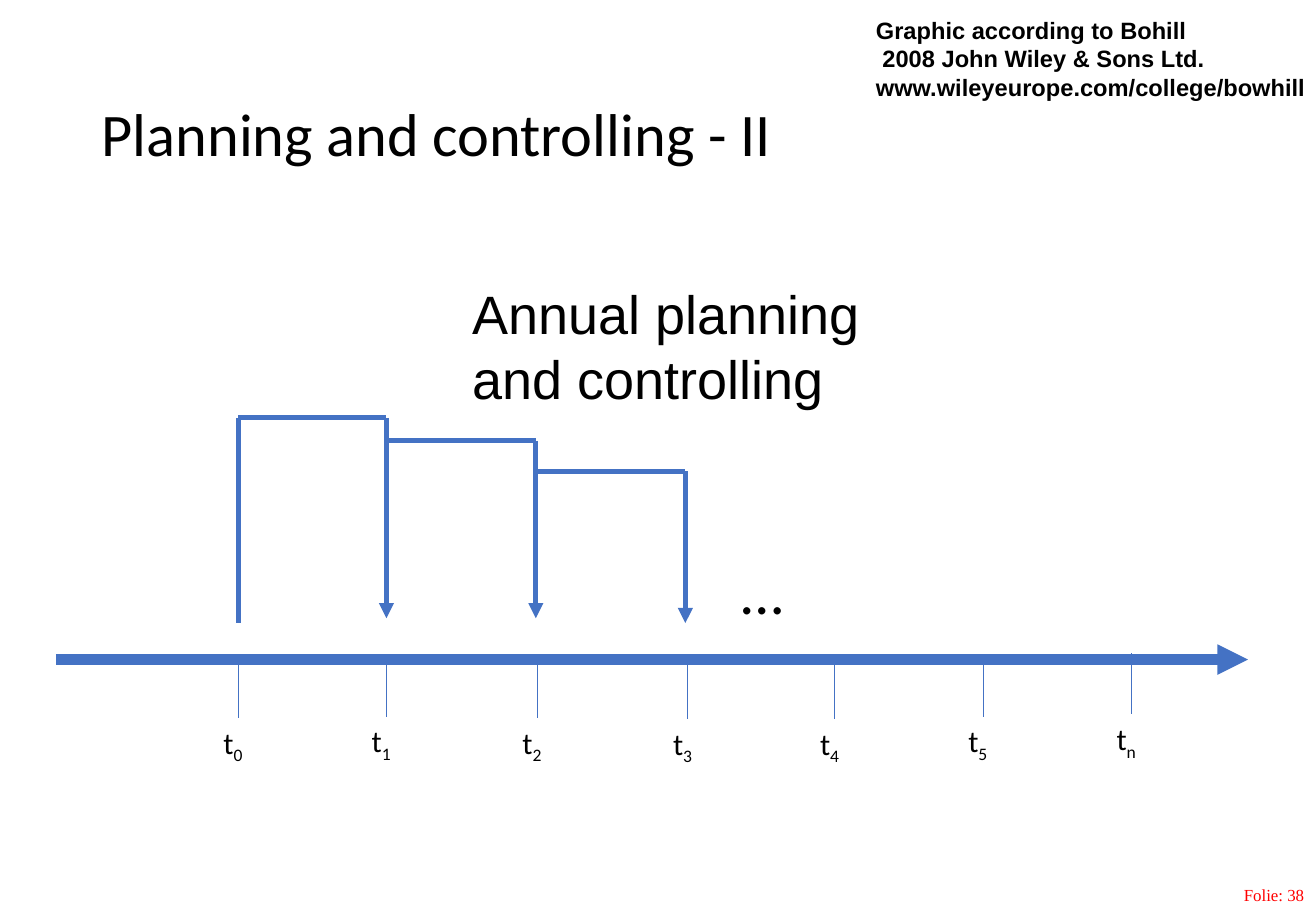
from pptx import Presentation
from pptx.util import Inches, Pt
from pptx.dml.color import RGBColor as RGB
from pptx.enum.shapes import MSO_CONNECTOR as Link
from pptx.enum.text import MSO_ANCHOR as Anchor, PP_ALIGN as Align
from pptx.oxml.ns import qn
from lxml.etree import SubElement

BLACK = RGB(0x00, 0x00, 0x00)
RED = RGB(0xFF, 0x00, 0x00)
BLUE = RGB(0x44, 0x72, 0xC4)

# Content: (box, paragraphs, font format, paragraph format, anchor)
TEXTS = [
    ((7.31, 7.23, 3.52, 0.27), ["Folie: 38"],
     dict(name="Times New Roman", size=Pt(10)), RED,
     dict(alignment=Align.RIGHT), Anchor.TOP),
    ((0.74, 0.4, 9.34, 1.45), ["Planning and controlling - II"],
     dict(name="Calibri", size=Pt(35.8)), BLACK,
     dict(line_spacing=0.9), Anchor.MIDDLE),
    ((7.11, 0.08, 3.84, 0.81),
     ["Graphic according to Bohill\v 2008 John Wiley & Sons Ltd.",
      "www.wileyeurope.com/college/bowhill"],
     dict(name="Arial", size=Pt(14), bold=True), BLACK, {}, Anchor.TOP),
    ((3.79, 2.26, 4.2, 1.72), ["Annual planning\vand controlling"],
     dict(name="Arial", size=Pt(32)), BLACK, {}, Anchor.TOP),
    ((6, 4.51, 0.53, 0.71), ["…"],
     dict(name="Calibri", size=Pt(36)), BLACK, {}, Anchor.TOP),
]
LABEL = dict(name="Calibri", size=Pt(18))

# Time axis: (subscript, x, top of tick)
AXIS = (0.46, 5.43, 10.27, 5.43)
TICKS = [("0", 1.96, 5.41), ("1", 3.18, 5.4), ("2", 4.42, 5.41),
         ("3", 5.66, 5.42), ("4", 6.87, 5.42), ("5", 8.09, 5.4),
         ("n", 9.31, 5.38)]
TICK = 0.5

# Planning periods: (left, right, top, arrow tip)
START = (1.96, 3.44, 1.96, 5.13)
STEPS = [(1.96, 3.18, 3.44, 5.09), (3.19, 4.41, 3.63, 5.09),
         (4.42, 5.64, 3.88, 5.13)]

deck = Presentation()
deck.slide_width, deck.slide_height = Inches(10.83), Inches(7.5)
slide = deck.slides.add_slide(deck.slide_layouts[6])


def style(item, form):
    for key, val in form.items():
        setattr(item, key, val)


def add_text(box, paras, form, color, layout, anchor):
    frame = slide.shapes.add_textbox(*map(Inches, box)).text_frame
    style(frame, dict(word_wrap=True, vertical_anchor=anchor))
    for i, text in enumerate(paras):
        para = frame.add_paragraph() if i else frame.paragraphs[0]
        para.text = text
        style(para, layout)
        for run in para.runs:
            style(run.font, form)
            run.font.color.rgb = color
    return para


def add_line(ends, width, arrow=False):
    line = slide.shapes.add_connector(Link.STRAIGHT, *map(Inches, ends))
    line.line.color.rgb = BLUE
    line.line.width = Pt(width)
    if arrow:
        SubElement(line.line._get_or_add_ln(), qn("a:tailEnd"), type="triangle")
    SubElement(line._element.spPr, qn("a:effectLst"))


# Headings and notes
for text in TEXTS:
    add_text(*text)

# Axis with ticks and labels
add_line(AXIS, 6, True)
for sub, x, top in TICKS:
    end = top + TICK
    add_line((x, top, x, end), 0.5)
    para = add_text((x - 0.22, end, 0.45, 0.4), ["t"], LABEL, BLACK, {},
                    Anchor.TOP)
    run = para.add_run()
    run.text = sub
    style(run.font, LABEL)
    run.font.color.rgb = BLACK
    run._r.get_or_add_rPr().set("baseline", "-25000")

# Stepped arrows
add_line(START, 3)
for left, right, top, tip in STEPS:
    add_line((right, top, left, top), 3)
    add_line((right, top, right, tip), 3, True)

deck.save("out.pptx")
